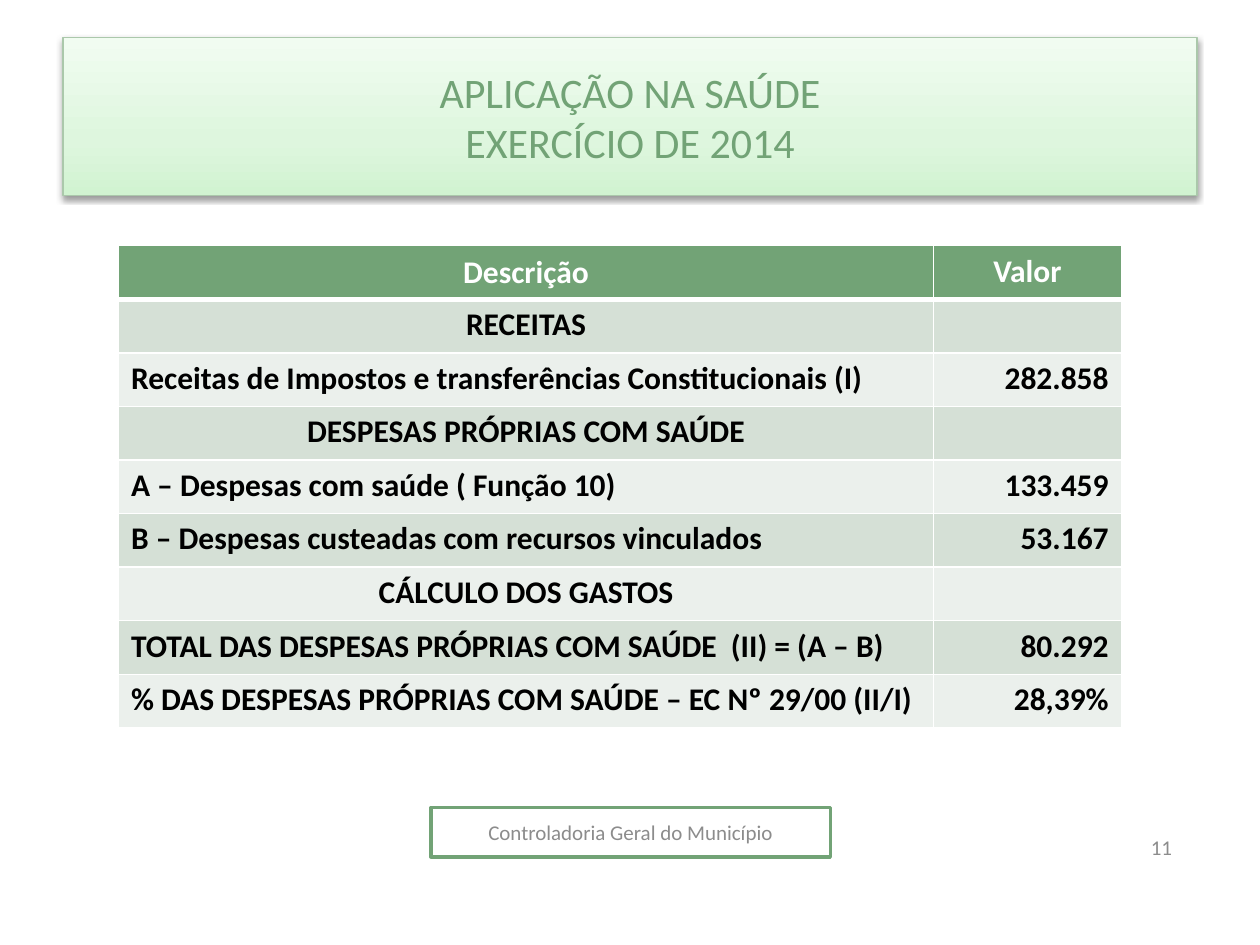
from copy import deepcopy

from lxml.etree import SubElement
from pptx import Presentation
from pptx.dml.color import RGBColor
from pptx.enum.shapes import MSO_SHAPE as Shape
from pptx.enum.text import MSO_ANCHOR as Anchor, PP_ALIGN as Align
from pptx.oxml.ns import qn
from pptx.util import Inches, Pt

WHITE = RGBColor(0xFF, 0xFF, 0xFF)
BLACK = RGBColor(0, 0, 0)
GREEN = RGBColor(0x72, 0xA3, 0x76)
PALE_EDGE = RGBColor(0xAB, 0xC8, 0xAB)
GRAY = RGBColor(0x8C, 0x8C, 0x8C)
BANDS = (RGBColor(0xD5, 0xE0, 0xD6), RGBColor(0xEB, 0xF0, 0xEC))
BANNER_STOPS = (
    (0, RGBColor(0xD1, 0xF3, 0xD1)),
    (0.35, RGBColor(0xDE, 0xF6, 0xDE)),
    (1, RGBColor(0xF1, 0xFC, 0xF1)),
)

HEADER = ("Descrição", "Valor")
ENTRIES = (
    ("RECEITAS", ""),
    ("Receitas de Impostos e transferências Constitucionais (I)", "282.858"),
    ("DESPESAS PRÓPRIAS COM SAÚDE", ""),
    ("A – Despesas com saúde ( Função 10)", "133.459"),
    ("B – Despesas custeadas com recursos vinculados", "53.167"),
    ("CÁLCULO DOS GASTOS", ""),
    ("TOTAL DAS DESPESAS PRÓPRIAS COM SAÚDE  (II) = (A – B)", "80.292"),
    ("% DAS DESPESAS PRÓPRIAS COM SAÚDE – EC Nº 29/00 (II/I)", "28,39%"),
)


def write(frame, text, align, **formats):
    """Put one formatted paragraph into a text frame."""
    paragraph = frame.paragraphs[0]
    paragraph.alignment = align
    run = paragraph.add_run()
    run.text = text
    run.font.name = "Calibri"
    run.font.color.rgb = formats.pop("color")
    for attribute, value in formats.items():
        setattr(run.font, attribute, value)


def place(element, left, top, width, height):
    """Set the position and size of an element in inches."""
    box = {"left": left, "top": top, "width": width, "height": height}
    for attribute, value in box.items():
        setattr(element, attribute, Inches(value))


def outline(element, color, width):
    """Give an element a solid outline."""
    element.line.color.rgb = color
    element.line.width = Pt(width)


def add_banner(slide):
    """Format the title as a shaded banner with a soft shadow."""
    banner = slide.shapes.title
    place(banner, 0.5, 0.3, 9, 1.25)
    banner.fill.gradient()
    banner.fill.gradient_angle = 90
    stop_list = banner.fill._fill._gradFill.gsLst
    stop_list.insert(1, deepcopy(stop_list[0]))
    for stop, (position, color) in zip(banner.fill.gradient_stops, BANNER_STOPS):
        stop.position = position
        stop.color.rgb = color
    outline(banner, PALE_EDGE, 0.75)
    banner.shadow.inherit = False
    effects = banner._element.spPr.find(qn("a:effectLst"))
    shadow = SubElement(effects, qn("a:outerShdw"), blurRad=str(Pt(3.1)),
                        dist=str(Pt(1.6)), dir="5400000", rotWithShape="0")
    shade = SubElement(shadow, qn("a:srgbClr"), val=str(BLACK))
    SubElement(shade, qn("a:alpha"), val="38000")
    banner.text_frame.vertical_anchor = Anchor.MIDDLE
    write(banner.text_frame, "APLICAÇÃO NA SAÚDE\vEXERCÍCIO DE 2014".split("\v")[0],
          Align.CENTER, size=Pt(24), color=GREEN)
    banner.text_frame.paragraphs[0].add_line_break()
    write(banner.text_frame, "EXERCÍCIO DE 2014", Align.CENTER, size=Pt(24), color=GREEN)


def style_cell(cell, fill, top=1, bottom=1):
    """Give a cell white borders and a solid fill."""
    properties = cell._tc.get_or_add_tcPr()
    for side, width in {"L": 1, "R": 1, "T": top, "B": bottom}.items():
        border = SubElement(properties, qn(f"a:ln{side}"), w=str(Pt(width)))
        paint = SubElement(border, qn("a:solidFill"))
        SubElement(paint, qn("a:srgbClr"), val=str(WHITE))
    cell.fill.solid()
    cell.fill.fore_color.rgb = fill


def add_health_table(slide):
    """Add the table of health revenue and spending."""
    row_count = len(ENTRIES) + 1
    table = slide.shapes.add_table(row_count, 2, Inches(0.94), Inches(1.95),
                                   Inches(7.96), Inches(3.83)).table
    for column, width in zip(table.columns, (6.47, 1.49)):
        column.width = Inches(width)
    for column, label in enumerate(HEADER):
        cell = table.cell(0, column)
        style_cell(cell, GREEN, bottom=3)
        write(cell.text_frame, label, Align.CENTER, size=Pt(18), bold=True, color=WHITE)
    table.cell(0, 0).vertical_anchor = Anchor.MIDDLE
    for row, (description, amount) in enumerate(ENTRIES, 1):
        description_align = Align.LEFT if amount else Align.CENTER
        contents = ((description, description_align), (amount, Align.RIGHT))
        for column, (text, align) in enumerate(contents):
            cell = table.cell(row, column)
            style_cell(cell, BANDS[(row - 1) % 2], top=3 if row == 1 else 1)
            if text:
                write(cell.text_frame, text, align, size=Pt(18), bold=True, color=BLACK)


def add_footer(slide):
    """Add the framed department name and the page number."""
    department = slide.shapes.add_shape(Shape.RECTANGLE, Inches(3.42), Inches(6.41),
                                        Inches(3.17), Inches(0.39))
    department.shadow.inherit = False
    department.fill.solid()
    department.fill.fore_color.rgb = WHITE
    outline(department, GREEN, 2)
    page = slide.shapes.add_textbox(Inches(7.19), Inches(6.41), Inches(2.21), Inches(0.63))
    labels = (
        (department, "Controladoria Geral do Município", Align.CENTER),
        (page, "11", Align.RIGHT),
    )
    for holder, text, align in labels:
        holder.text_frame.word_wrap = True
        holder.text_frame.vertical_anchor = Anchor.MIDDLE
        write(holder.text_frame, text, align, size=Pt(12), color=GRAY)


def main():
    """Build the slide and save it."""
    presentation = Presentation()
    presentation.slide_width = Inches(10)
    presentation.slide_height = Inches(7.5)
    slide = presentation.slides.add_slide(presentation.slide_layouts[5])
    add_banner(slide)
    add_health_table(slide)
    add_footer(slide)
    presentation.save("out.pptx")


if __name__ == "__main__":
    main()
